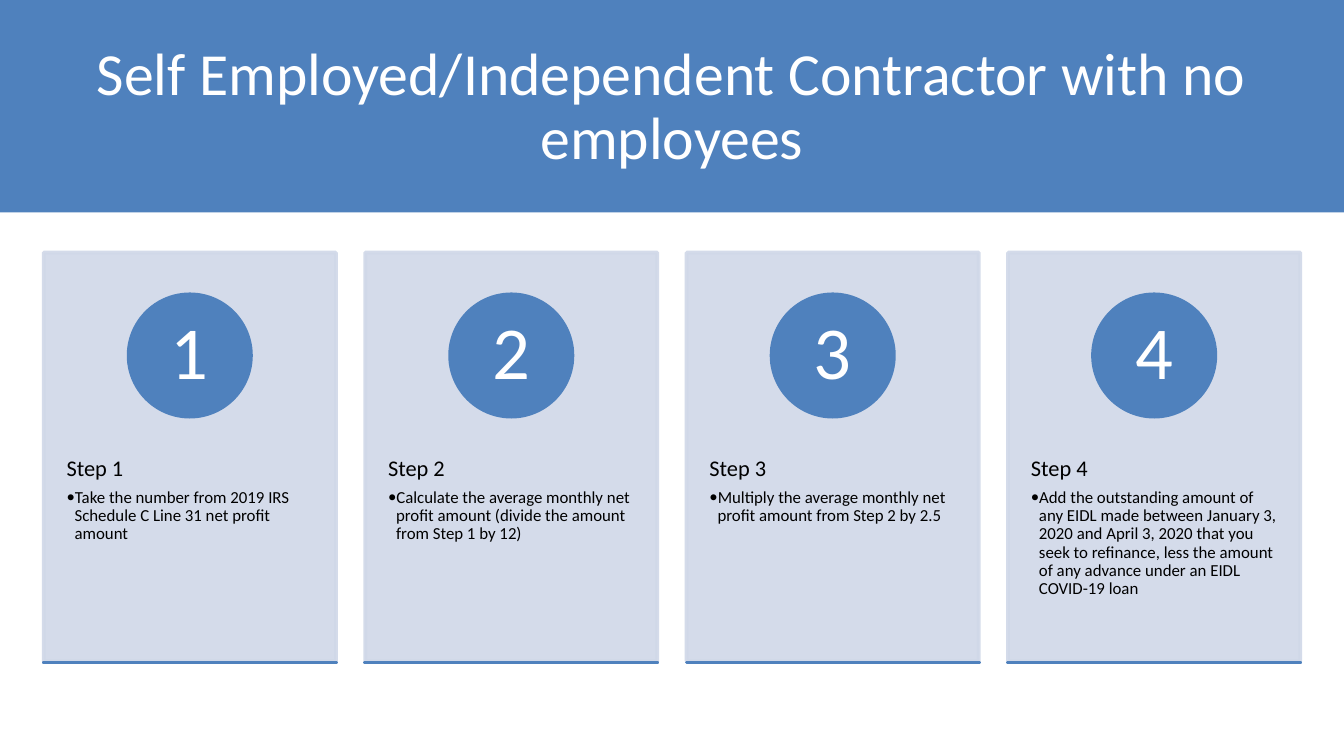
import pptx
import pptx.util
import pptx.dml.color
import pptx.enum.shapes
import pptx.enum.text
import pptx.oxml
import pptx.oxml.ns
from lxml import etree

Inches, Pt = pptx.util.Inches, pptx.util.Pt
SHAPE = pptx.enum.shapes.MSO_SHAPE
ALIGN = pptx.enum.text.PP_ALIGN
ANCHOR = pptx.enum.text.MSO_ANCHOR

# Content
TITLE = "Self Employed/Independent Contractor with no employees"
STEPS = [
    "Take the number from 2019 IRS Schedule C Line 31 net profit amount",
    "Calculate the average monthly net profit amount (divide the amount from Step 1 by 12)",
    "Multiply the average monthly net profit amount from Step 2 by 2.5",
    "Add the outstanding amount of any EIDL made between January 3, 2020 and April 3, 2020 "
    "that you seek to refinance, less the amount of any advance under an EIDL COVID-19 loan",
]

# Theme and layout, lengths in inches
THEME = {
    "font": "Calibri", "blue": "4F81BD", "pale": "D0D8E8", "white": "FFFFFF", "black": "000000",
    "title": 32, "number": 40, "heading": 12, "body": 9, "line": 2, "pale_alpha": 90,
}
WIDTH = 10
HEIGHT = WIDTH * 9 / 16
BAND_TOP, BAND_HEIGHT = -0.01, 1.59
TITLE_LEFT, TITLE_TOP, TITLE_HEIGHT = 0.32, 0.26, 1.09
ROW_WIDTH = 9.35
ROW_LEFT = (WIDTH - ROW_WIDTH) / 2
GAP_SHARE = 0.1  # gap between cards as a share of a card
CARD_WIDTH = ROW_WIDTH / (len(STEPS) + GAP_SHARE * (len(STEPS) - 1))
PITCH = CARD_WIDTH * (1 + GAP_SHARE)
CARD_TOP, CARD_HEIGHT = 1.88, 3.04
BASE_TOP = 4.93
CIRCLE_TOP, CIRCLE_SIZE = 2.18, 0.94
TEXT_TOP, TEXT_HEIGHT = 3.04, 1.83
BULLET_INDENT = 0.06

CIRCLE_TOP, CIRCLE_SIZE = 2.19, 0.91


def color(name):
    return pptx.dml.color.RGBColor.from_string(THEME[name])


def set_all(target, values):
    for name, value in values.items():
        setattr(target, name, value)


def set_frame(frame, sides, top, anchor):
    set_all(frame, {
        "word_wrap": True, "auto_size": pptx.enum.text.MSO_AUTO_SIZE.NONE,
        "vertical_anchor": anchor,
        "margin_left": Inches(sides), "margin_right": Inches(sides),
        "margin_top": Inches(top), "margin_bottom": Inches(top),
    })


def write(para, text, size, ink, align=ALIGN.LEFT, after=0):
    set_all(para, {"alignment": align, "line_spacing": 0.9,
                   "space_before": Pt(0), "space_after": Pt(after)})
    span = para.add_run()
    span.text = text
    set_all(span.font, {"name": THEME["font"], "size": Pt(THEME[size])})
    span.font.color.rgb = color(ink)


def add_bullet(para):
    para.level = 1
    props = para._p.get_or_add_pPr()
    props.set("marL", str(Inches(BULLET_INDENT)))
    props.set("indent", str(-Inches(BULLET_INDENT)))
    etree.SubElement(props, pptx.oxml.ns.qn("a:buFont")).set("typeface", THEME["font"])
    etree.SubElement(props, pptx.oxml.ns.qn("a:buChar")).set("char", "•")


def add_alpha(holder, percent):
    for node in holder.iter(pptx.oxml.ns.qn("a:srgbClr")):
        etree.SubElement(node, pptx.oxml.ns.qn("a:alpha")).set("val", str(percent * 1000))


def add_block(page, kind, left, top, width, height, paint, outlined=True):
    block = page.shapes.add_shape(kind, Inches(left), Inches(top), Inches(width), Inches(height))
    block.shadow.inherit = False
    block.fill.solid()
    block.fill.fore_color.rgb = color(paint)
    if outlined:
        block.line.color.rgb = color(paint)
        block.line.width = Pt(THEME["line"])
    else:
        block.line.fill.background()
    return block


def add_header(page):
    band = add_block(page, SHAPE.RECTANGLE, 0, BAND_TOP, WIDTH, BAND_HEIGHT, "blue", outlined=False)
    title = page.shapes.title
    title.element.addprevious(band.element)
    set_all(title, {"left": Inches(TITLE_LEFT), "top": Inches(TITLE_TOP),
                    "width": Inches(WIDTH - 2 * TITLE_LEFT), "height": Inches(TITLE_HEIGHT)})
    set_frame(title.text_frame, 0.1, 0.05, ANCHOR.MIDDLE)
    write(title.text_frame.paragraphs[0], TITLE, "title", "white", ALIGN.CENTER)


def add_step(page, index, body):
    left = ROW_LEFT + index * PITCH

    # Card
    card = add_block(page, SHAPE.RECTANGLE, left, CARD_TOP, CARD_WIDTH, CARD_HEIGHT, "pale")
    add_alpha(card.element.spPr, THEME["pale_alpha"])

    # Heading and bullet
    box = page.shapes.add_textbox(Inches(left), Inches(TEXT_TOP),
                                  Inches(CARD_WIDTH), Inches(TEXT_HEIGHT))
    set_frame(box.text_frame, 0.17, 0.36, ANCHOR.TOP)
    write(box.text_frame.paragraphs[0], f"Step {index + 1}", "heading", "black", after=4.2)
    para = box.text_frame.add_paragraph()
    write(para, body, "body", "black", after=1.35)
    add_bullet(para)

    # Numbered circle
    circle = add_block(page, SHAPE.OVAL, left + (CARD_WIDTH - CIRCLE_SIZE) / 2, CIRCLE_TOP,
                       CIRCLE_SIZE, CIRCLE_SIZE, "blue")
    set_frame(circle.text_frame, 0.07, 0.01, ANCHOR.MIDDLE)
    write(circle.text_frame.paragraphs[0], str(index + 1), "number", "white", ALIGN.CENTER)

    # Base line
    add_block(page, SHAPE.RECTANGLE, left, BASE_TOP, CARD_WIDTH, 0, "blue")


def main():
    deck = pptx.Presentation()
    set_all(deck, {"slide_width": Inches(WIDTH), "slide_height": Inches(HEIGHT)})
    page = deck.slides.add_slide(deck.slide_layouts.get_by_name("Title Only"))
    add_header(page)
    for index, body in enumerate(STEPS):
        add_step(page, index, body)
    deck.save("out.pptx")


if __name__ == "__main__":
    main()
